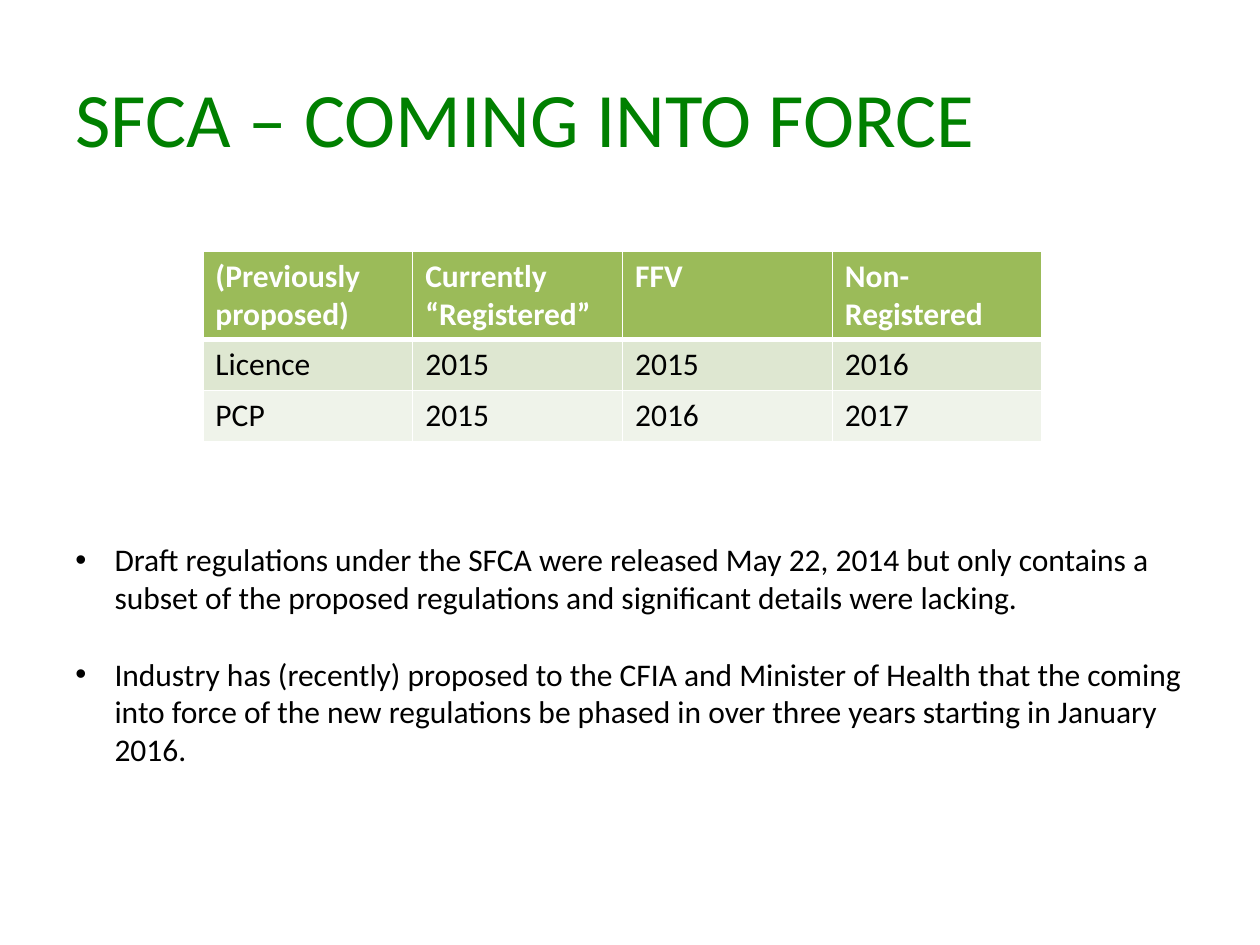
from dataclasses import dataclass

from lxml import etree
from pptx import Presentation
from pptx import util as u
from pptx.dml.color import RGBColor
from pptx.enum import text
from pptx.oxml import ns


@dataclass(frozen=True)
class Theme:
    font: str = "Calibri"
    title_size: int = 44
    body_size: int = 18
    title: str = "008000"
    ink: str = "000000"
    white: str = "FFFFFF"
    header: str = "9BBB59"
    bands: tuple = ("DEE7D1", "EFF3EA")
    rule: int = 1
    header_rule: int = 3


class SlideBuilder:
    """Draws titles, tables and bullet lists on one slide in one theme."""

    def __init__(self, slide, theme):
        self.slide = slide
        self.theme = theme

    def format_runs(self, frame, size, color, bold=False):
        for paragraph in frame.paragraphs:
            for run in paragraph.runs:
                run.font.name = self.theme.font
                run.font.size = u.Pt(size)
                run.font.bold = bold
                run.font.color.rgb = RGBColor.from_string(color)

    def text_frame(self, left, top, width, height):
        frame = self.slide.shapes.add_textbox(
            u.Cm(left), u.Cm(top), u.Cm(width), u.Cm(height)).text_frame
        frame.word_wrap = True
        return frame

    def title(self, wording, *box):
        frame = self.text_frame(*box)
        frame.vertical_anchor = text.MSO_ANCHOR.MIDDLE
        frame.text = wording
        self.format_runs(frame, self.theme.title_size, self.theme.title)

    def border(self, cell, side, points):
        line = etree.SubElement(cell._tc.get_or_add_tcPr(), ns.qn(f"a:ln{side}"),
                                w=str(u.Pt(points)))
        fill = etree.SubElement(line, ns.qn("a:solidFill"))
        etree.SubElement(fill, ns.qn("a:srgbClr"), val=self.theme.white)

    def cell(self, cell, wording, row):
        theme = self.theme
        is_header = row == 0
        widths = {"L": theme.rule, "R": theme.rule,
                  "T": theme.header_rule if row == 1 else theme.rule,
                  "B": theme.header_rule if is_header else theme.rule}
        for side, points in widths.items():
            self.border(cell, side, points)
        cell.fill.solid()
        cell.fill.fore_color.rgb = RGBColor.from_string(
            theme.header if is_header else theme.bands[(row - 1) % 2])
        cell.text = wording
        self.format_runs(cell.text_frame, theme.body_size,
                         theme.white if is_header else theme.ink, is_header)

    def table(self, rows, left, top, column_width, row_heights):
        columns = len(rows[0])
        table = self.slide.shapes.add_table(
            len(rows), columns, u.Cm(left), u.Cm(top),
            u.Cm(column_width * columns), u.Cm(sum(row_heights))).table
        for column in table.columns:
            column.width = u.Cm(column_width)
        for r, (wordings, height) in enumerate(zip(rows, row_heights)):
            table.rows[r].height = u.Cm(height)
            for c, wording in enumerate(wordings):
                self.cell(table.cell(r, c), wording, r)

    def bullets(self, points, indent, gap, *box):
        frame = self.text_frame(*box)
        frame.text = "\n".join(points)
        for paragraph in frame.paragraphs:
            paragraph.space_after = u.Pt(gap)
            properties = paragraph._p.get_or_add_pPr()
            properties.set("marL", str(u.Cm(indent)))
            properties.set("indent", str(-u.Cm(indent)))
            etree.SubElement(properties, ns.qn("a:buFont"), typeface="Arial")
            etree.SubElement(properties, ns.qn("a:buChar"), char="•")
        self.format_runs(frame, self.theme.body_size, self.theme.ink)


def main():
    deck = Presentation()
    deck.slide_width, deck.slide_height = u.Cm(25.4), u.Cm(19.05)
    builder = SlideBuilder(deck.slides.add_slide(deck.slide_layouts[6]), Theme())

    builder.title("SFCA – COMING INTO FORCE", 1.27, 0.76, 22.86, 3.18)

    schedule = [
        ["(Previously proposed)", "Currently “Registered”", "FFV", "Non-Registered"],
        ["Licence", "2015", "2015", "2016"],
        ["PCP", "2015", "2016", "2017"],
    ]
    builder.table(schedule, 4.09, 5.06, 4.23, [1.78, 1.03, 1.03])

    regulation_status = [
        "Draft regulations under the SFCA were released May 22, 2014 but only contains "
        "a subset of the proposed regulations and significant details were lacking.",
        "Industry has (recently) proposed to the CFIA and Minister of Health that the "
        "coming into force of the new regulations be phased in over three years "
        "starting in January 2016.",
    ]
    builder.bullets(regulation_status, 0.79, 22, 1.27, 10.77, 23.37, 6.4)

    deck.save("out.pptx")


if __name__ == "__main__":
    main()
